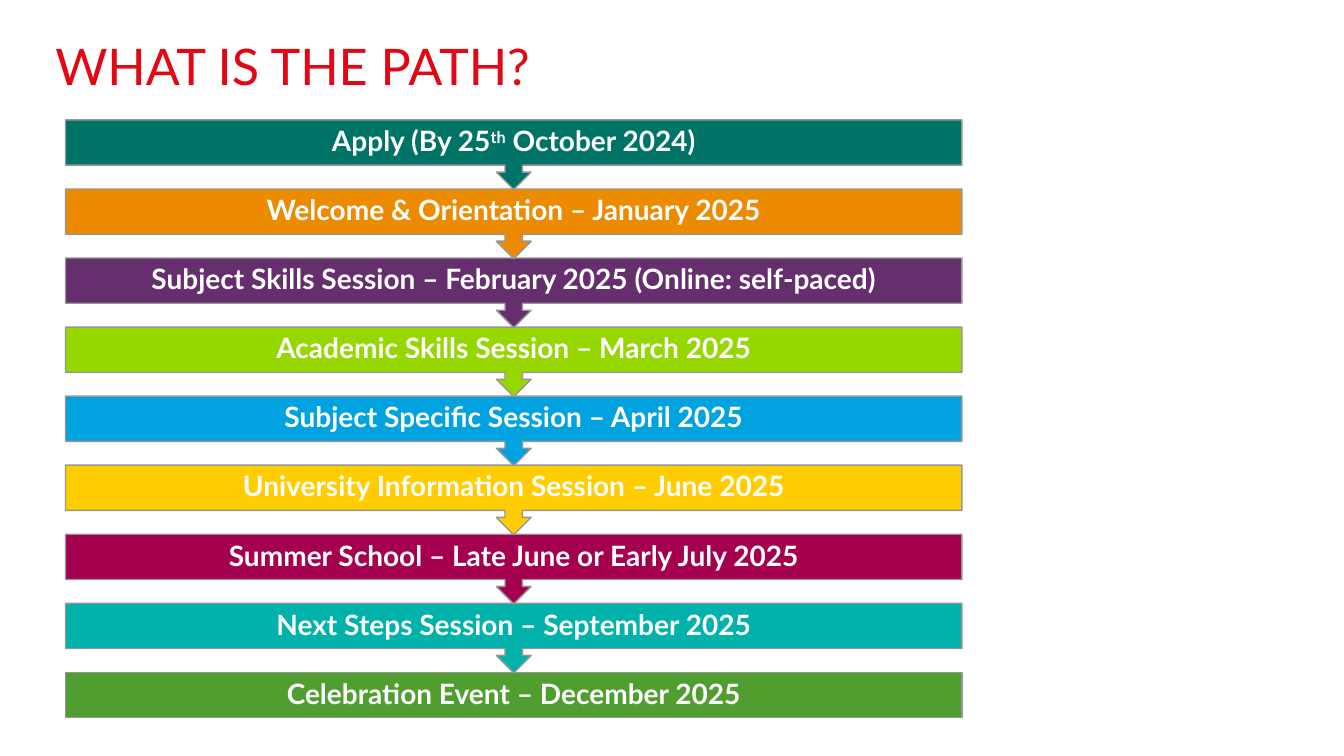
from pptx import Presentation
from pptx.dml.color import RGBColor
from pptx.enum import shapes, text
from pptx.util import Inches, Pt

FONT = "Lato"
LEFT, TOP, WIDTH = 0.65, 1.19, 8.89
PITCH, BAR_HEIGHT, CALLOUT_HEIGHT = 0.685, 0.45, 0.69
STEPS = [
    ([("Apply (By 25", 0), ("th", 30000), (" October 2024)", 0)], "007367"),
    ([("Welcome & Orientation – January 2025", 0)], "ED8B00"),
    ([("Subject Skills Session – February 2025 (Online: self-paced)", 0)], "642F6C"),
    ([("Academic Skills Session – March 2025", 0)], "97D700"),
    ([("Subject Specific Session – April 2025", 0)], "00A3E0"),
    ([("University Information Session – June 2025", 0)], "FFCD00"),
    ([("Summer School – Late June or Early July 2025", 0)], "A50050"),
    ([("Next Steps Session – September 2025", 0)], "00B2A9"),
    ([("Celebration Event – December 2025", 0)], "509E2F"),
]


def color(value):
    return RGBColor.from_string(value)


def set_attributes(target, values):
    for name, value in values.items():
        setattr(target, name, value)


def add_text(container, box, runs, size, font_color, bold=False, frame_format=None, paragraph_format=None):
    frame = container.add_textbox(*map(Inches, box)).text_frame
    set_attributes(frame, {
        "word_wrap": True,
        "vertical_anchor": text.MSO_ANCHOR.MIDDLE,
        **(frame_format or {}),
    })
    paragraph = frame.paragraphs[0]
    set_attributes(paragraph, paragraph_format or {})
    for content, baseline in runs:
        run = paragraph.add_run()
        run.text = content
        set_attributes(run.font, {"name": FONT, "size": Pt(size), "bold": bold})
        run.font.color.rgb = color(font_color)
        if baseline:
            run._r.get_or_add_rPr().set("baseline", str(baseline))


def add_bar(container, preset, box, fill, rotation=0):
    shape = container.add_shape(preset, *map(Inches, box))
    shape.rotation = rotation
    shape.shadow.inherit = False
    shape.fill.solid()
    shape.fill.fore_color.rgb = color(fill)
    shape.line.color.rgb = color("969696")
    shape.line.width = Pt(1)


def add_step(container, index, runs, fill):
    top = TOP + index * PITCH
    label_box = (LEFT, top, WIDTH, BAR_HEIGHT)
    if index == len(STEPS) - 1:
        add_bar(container, shapes.MSO_SHAPE.RECTANGLE, label_box, fill)
    else:
        callout_box = (LEFT, top, WIDTH, CALLOUT_HEIGHT)
        add_bar(container, shapes.MSO_SHAPE.UP_ARROW_CALLOUT, callout_box, fill, 180)
    sides = ("left", "right", "top", "bottom")
    margins = {f"margin_{side}": Inches(0.16) for side in sides}
    centered = {"alignment": text.PP_ALIGN.CENTER, "line_spacing": 0.9}
    add_text(container, label_box, runs, 20, "FFFFFF", True, margins, centered)


def main():
    presentation = Presentation()
    presentation.slide_width = Inches(13.33)
    presentation.slide_height = Inches(7.5)
    slide = presentation.slides.add_slide(presentation.slide_layouts[6])
    path_group = slide.shapes.add_group_shape()
    for index, (runs, fill) in reversed(list(enumerate(STEPS))):
        add_step(path_group.shapes, index, runs, fill)
    add_text(slide.shapes, (0.45, 0.1, 6.12, 1.09), [("WHAT IS THE PATH?", 0)], 36, "E30613")
    presentation.save("out.pptx")


if __name__ == "__main__":
    main()
